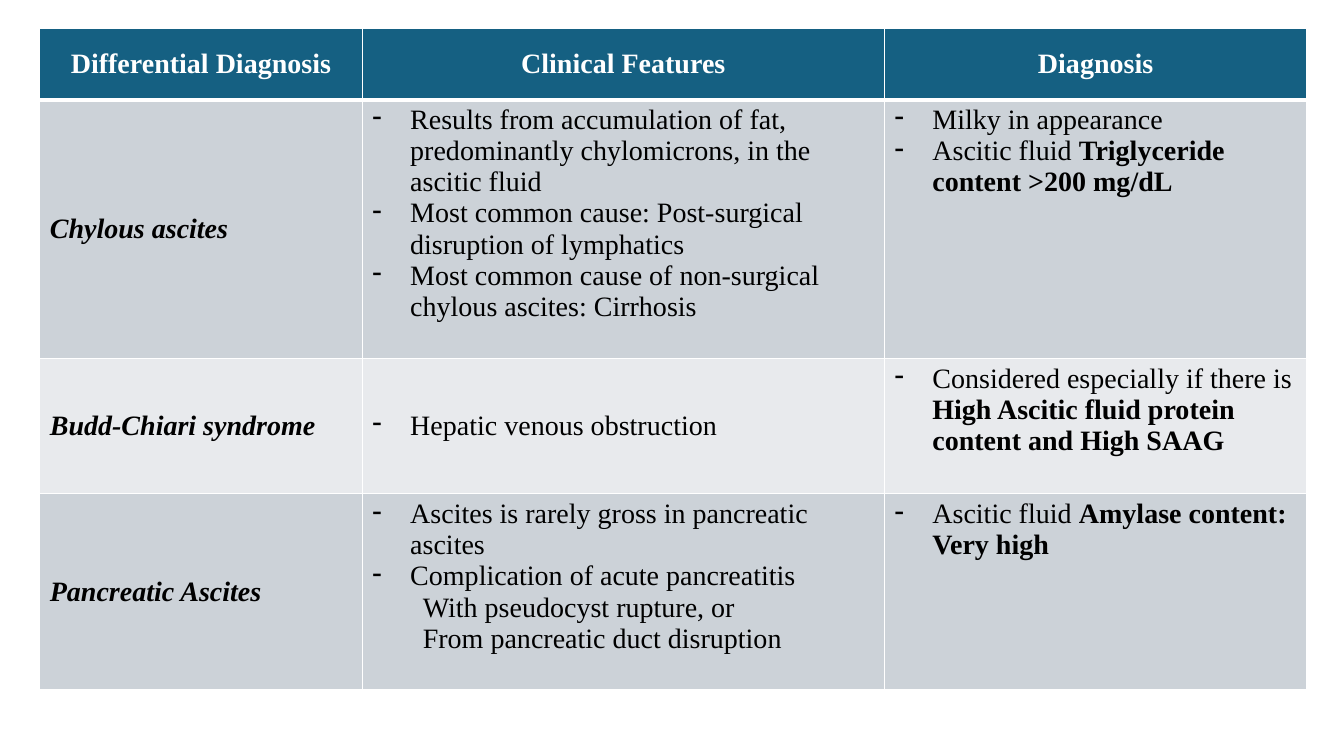
from lxml import etree
from pptx import Presentation
from pptx import util as u
from pptx.dml import color
from pptx.enum import text
from pptx.oxml import ns

Pt = u.Pt
FONT = {"name": "Times New Roman", "size": Pt(20)}
WHITE, BLACK, HEADER = "FFFFFF", "000000", "156082"
BANDS = ["CCD2D8", "E8EAED"]
COLUMNS = [230.4, 373, 301.7]
ROWS = [51, 185, 96.5, 140]
TOP, MIDDLE = text.MSO_ANCHOR.TOP, text.MSO_ANCHOR.MIDDLE

# A paragraph is (kind, plain text, bold text)
HEADINGS = ["Differential Diagnosis", "Clinical Features", "Diagnosis"]
DISEASES = [
    ("Chylous ascites", TOP,
     [("dash", "Results from accumulation of fat, predominantly chylomicrons, in the ascitic fluid", ""),
      ("dash", "Most common cause: Post‐surgical disruption of lymphatics", ""),
      ("dash", "Most common cause of non‐surgical chylous ascites: Cirrhosis", "")],
     [("dash", "Milky in appearance", ""),
      ("dash", "Ascitic fluid ", "Triglyceride content >200 mg/dL")]),
    ("Budd-Chiari syndrome", MIDDLE,
     [("dash", "Hepatic venous obstruction", "")],
     [("dash", "Considered especially if there is ",
       "High Ascitic fluid protein content and High SAAG")]),
    ("Pancreatic Ascites", TOP,
     [("dash", "Ascites is rarely gross in pancreatic ascites", ""),
      ("dash", "Complication of acute pancreatitis", ""),
      ("sub", "With pseudocyst rupture, or", ""),
      ("sub", "From pancreatic duct disruption", "")],
     [("dash", "Ascitic fluid ", "Amylase content: Very high")]),
]


def rgb(value):
    return color.RGBColor.from_string(value)


def add_run(p, words, ink=BLACK, **formats):
    r = p.add_run()
    r.text = words
    for key, value in {**FONT, **formats}.items():
        setattr(r.font, key, value)
    r.font.color.rgb = rgb(ink)


def indent(p, kind):
    """Hanging dash for list items, plain indent for their sub-lines."""
    pPr = p._p.get_or_add_pPr()
    left, hang = (27, -27) if kind == "dash" else (36, 0)
    pPr.set("marL", str(Pt(left)))
    pPr.set("indent", str(Pt(hang)))
    if kind == "dash":
        etree.SubElement(pPr, ns.qn("a:buFontTx"))
        etree.SubElement(pPr, ns.qn("a:buChar"), char="-")
    else:
        p.level = 1
        etree.SubElement(pPr, ns.qn("a:buNone"))


def style_cell(cell, fill, anchor, bottom=1):
    # Borders come before the fill in the cell properties
    tcPr = cell._tc.get_or_add_tcPr()
    for side, width in {"L": 1, "R": 1, "T": 1, "B": bottom}.items():
        ln = etree.SubElement(tcPr, ns.qn(f"a:ln{side}"), w=str(Pt(width)))
        solid = etree.SubElement(ln, ns.qn("a:solidFill"))
        etree.SubElement(solid, ns.qn("a:srgbClr"), val=WHITE)
    cell.fill.solid()
    cell.fill.fore_color.rgb = rgb(fill)
    cell.vertical_anchor = anchor


def fill_label(cell, words, align, ink, **formats):
    p = cell.text_frame.paragraphs[0]
    p.alignment = align
    add_run(p, words, ink, bold=True, **formats)


def fill_list(cell, items):
    tf = cell.text_frame
    for i, (kind, plain, strong) in enumerate(items):
        p = tf.add_paragraph() if i else tf.paragraphs[0]
        indent(p, kind)
        add_run(p, plain, bold=False)
        if strong:
            add_run(p, strong, bold=True)


def add_grid(slide):
    frame = slide.shapes.add_table(len(ROWS), len(COLUMNS), Pt(28.4), Pt(20.2),
                                   Pt(sum(COLUMNS)), Pt(sum(ROWS)))
    table = frame.table
    for column, width in zip(table.columns, COLUMNS):
        column.width = Pt(width)
    for row, height in zip(table.rows, ROWS):
        row.height = Pt(height)
    return table


def main():
    prs = Presentation()
    prs.slide_width, prs.slide_height = Pt(960), Pt(540)
    table = add_grid(prs.slides.add_slide(prs.slide_layouts[6]))

    # Header row
    for col, heading in enumerate(HEADINGS):
        cell = table.cell(0, col)
        style_cell(cell, HEADER, MIDDLE, bottom=3)
        fill_label(cell, heading, text.PP_ALIGN.CENTER, WHITE)

    # One row per disease, in alternating bands
    for row, (name, anchor, features, diagnosis) in enumerate(DISEASES, 1):
        cells = [table.cell(row, col) for col in range(len(COLUMNS))]
        for cell, place in zip(cells, (MIDDLE, anchor, TOP)):
            style_cell(cell, BANDS[(row - 1) % 2], place, bottom=1)
        for cell in cells if row == 1 else []:
            cell._tc.tcPr.find(ns.qn("a:lnT")).set("w", str(Pt(3)))
        fill_label(cells[0], name, text.PP_ALIGN.LEFT, BLACK, italic=True)
        fill_list(cells[1], features)
        fill_list(cells[2], diagnosis)

    prs.save("out.pptx")


if __name__ == "__main__":
    main()
